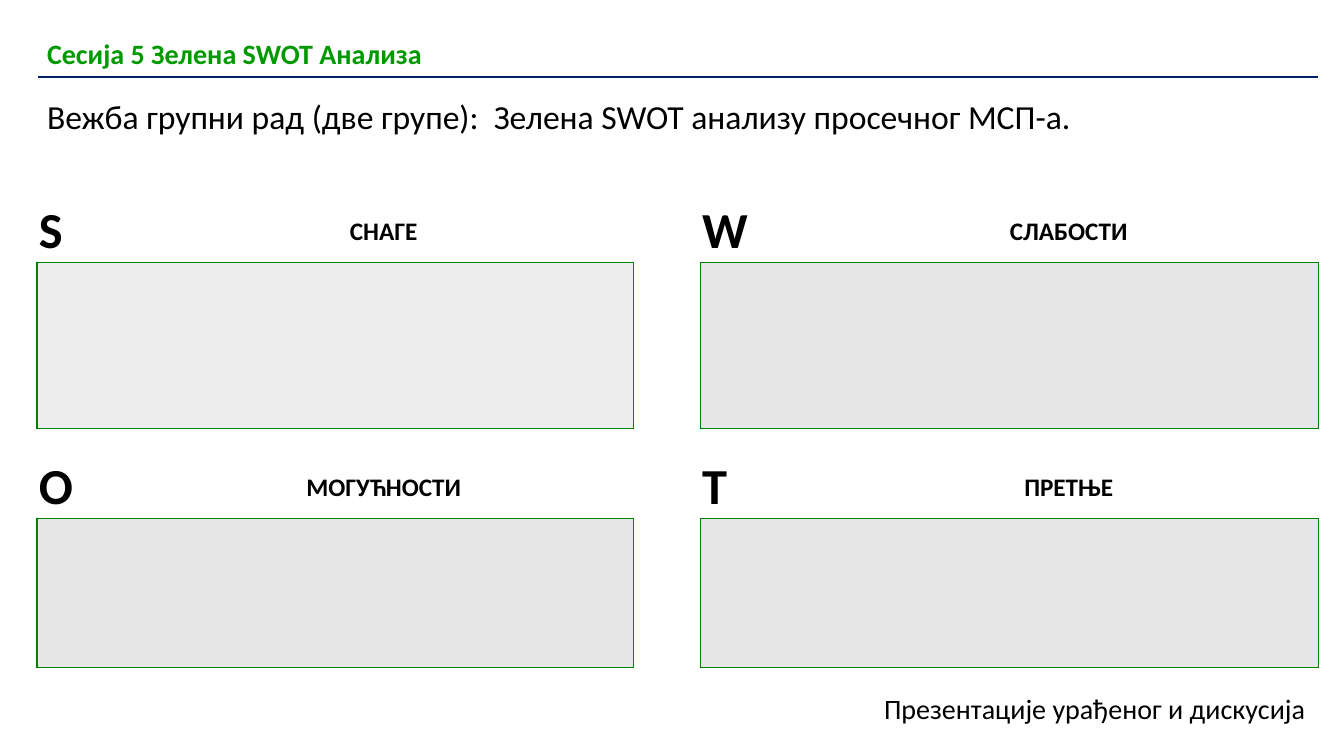
from dataclasses import dataclass
from typing import Any

import pptx
import pptx.dml.color
import pptx.enum.text
import pptx.oxml
import pptx.oxml.ns
import pptx.util
from lxml import etree

SLIDE_WIDTH = pptx.util.Inches(13.33)
SLIDE_HEIGHT = pptx.util.Inches(7.5)
FONT = "Calibri"
BLACK, WHITE, GREEN, DARK_GREEN, NAVY = "000000", "FFFFFF", "009900", "008000", "002060"
NO_STYLE = "{2D5ABB26-0587-4C30-8999-92F81FD0307C}"
LEFT, WIDTH = 2.75, 95.34
COLUMN_SHARES = [7.2, 13.88, 23.33, 4.95, 8.85, 12, 25.13]
ROW_SHARES = [8.13, 4.4, 17.6, 3.73, 8.13, 6.2, 13.5]
ALIGN = pptx.enum.text.PP_ALIGN
ANCHOR = pptx.enum.text.MSO_ANCHOR
CELL_FORMAT = {
    "margin_left": pptx.util.Inches(0.02),
    "margin_right": pptx.util.Inches(0.02),
    "margin_top": 0,
    "margin_bottom": 0,
    "vertical_anchor": ANCHOR.MIDDLE,
}
FRAME_FORMAT = {
    "word_wrap": True,
    "vertical_anchor": ANCHOR.TOP,
    "auto_size": pptx.enum.text.MSO_AUTO_SIZE.NONE,
}


@dataclass(frozen=True)
class Quadrant:
    letter: str
    heading: str
    row: int
    column: int
    fill: str


QUADRANTS = [
    Quadrant("S", "СНАГЕ", 0, 0, "EDEDED"),
    Quadrant("W", "СЛАБОСТИ", 0, 4, "E7E6E6"),
    Quadrant("О", "МОГУЋНОСТИ", 4, 0, "E7E6E6"),
    Quadrant("Т", "ПРЕТЊЕ", 4, 4, "E7E6E6"),
]


def across(share: float) -> int:
    return round(SLIDE_WIDTH * share / 100)


def down(share: float) -> int:
    return round(SLIDE_HEIGHT * share / 100)


def color(value: str) -> Any:
    return pptx.dml.color.RGBColor.from_string(value)


def apply(target: Any, values: dict[str, Any]) -> None:
    for name, value in values.items():
        setattr(target, name, value)


def write(frame: Any, text: str, size: int, tint: str = BLACK,
          bold: bool = False, align: Any = ALIGN.LEFT) -> None:
    paragraph = frame.paragraphs[0]
    paragraph.alignment = align
    run = paragraph.add_run()
    run.text = text
    apply(run.font, {"name": FONT, "size": pptx.util.Pt(size), "bold": bold})
    run.font.color.rgb = color(tint)


def draw_border(cell: Any, sides: str, tint: str) -> None:
    properties = cell._tc.get_or_add_tcPr()
    for side in sides:
        line = etree.Element(pptx.oxml.ns.qn(f"a:ln{side}"), w="12700")
        fill = etree.SubElement(line, pptx.oxml.ns.qn("a:solidFill"))
        etree.SubElement(fill, pptx.oxml.ns.qn("a:srgbClr"), val=tint)
        borders = [child for child in properties
                   if etree.QName(child).localname.startswith("ln")]
        properties.insert(len(borders), line)


def add_plain_table(slide: Any, top: float, rows: list[float], columns: list[float]) -> Any:
    frame = slide.shapes.add_table(
        len(rows), len(columns), across(LEFT), down(top), across(WIDTH), down(sum(rows)))
    table = frame.table
    apply(table, {"first_row": False, "horz_banding": False})
    table._tbl.tblPr.find(pptx.oxml.ns.qn("a:tableStyleId")).text = NO_STYLE
    for row, share in zip(table.rows, rows):
        row.height = down(share)
    for column, share in zip(table.columns, columns):
        column.width = across(share)
    return table


def add_session_heading(slide: Any) -> None:
    cell = add_plain_table(slide, 4.3, [5.73], [WIDTH]).cell(0, 0)
    draw_border(cell, "LRT", WHITE)
    draw_border(cell, "B", NAVY)
    cell.fill.background()
    write(cell.text_frame, "Сесија 5 Зелена SWOT Анализа", 20, GREEN, True)


def draw_quadrant(table: Any, quadrant: Quadrant) -> None:
    row, column = quadrant.row, quadrant.column
    letter, heading = table.cell(row, column), table.cell(row, column + 1)
    heading.merge(table.cell(row, column + 2))
    write(letter.text_frame, quadrant.letter, 36, bold=True, align=ALIGN.JUSTIFY)
    write(heading.text_frame, quadrant.heading, 18, bold=True, align=ALIGN.CENTER)
    table.cell(row + 1, column).merge(table.cell(row + 2, column + 2))
    for box_row in (row + 1, row + 2):
        for box_column in range(column, column + 3):
            cell = table.cell(box_row, box_column)
            draw_border(cell, "LRTB", DARK_GREEN)
            cell.fill.solid()
            cell.fill.fore_color.rgb = color(quadrant.fill)


def add_swot_table(slide: Any) -> None:
    table = add_plain_table(slide, 26.53, ROW_SHARES, COLUMN_SHARES)
    for cell in table.iter_cells():
        apply(cell, CELL_FORMAT)
        cell.fill.background()
        cell.text_frame.paragraphs[0]._p.get_or_add_endParaRPr().set("sz", "1200")
    for column in (0, 4):
        table.cell(3, column).merge(table.cell(3, column + 1))
    for quadrant in QUADRANTS:
        draw_quadrant(table, quadrant)


def add_exercise_title(slide: Any) -> None:
    title = slide.shapes.title
    apply(title, {"left": across(LEFT), "top": down(12),
                  "width": across(WIDTH), "height": down(6.67)})
    apply(title.text_frame, FRAME_FORMAT)
    write(title.text_frame,
          "Вежба групни рад (две групе):  Зелена SWOT анализу просечног МСП-а.", 24)


def add_closing_note(slide: Any) -> None:
    note = slide.shapes.add_textbox(across(65.04), down(90.8), across(34.96), down(5.87))
    apply(note.text_frame, FRAME_FORMAT)
    write(note.text_frame, "Презентације урађеног и дискусија", 20)


def main() -> None:
    presentation = pptx.Presentation()
    apply(presentation, {"slide_width": SLIDE_WIDTH, "slide_height": SLIDE_HEIGHT})
    slide = presentation.slides.add_slide(presentation.slide_layouts[5])
    add_closing_note(slide)
    add_session_heading(slide)
    add_swot_table(slide)
    add_exercise_title(slide)
    presentation.save("out.pptx")


if __name__ == "__main__":
    main()
